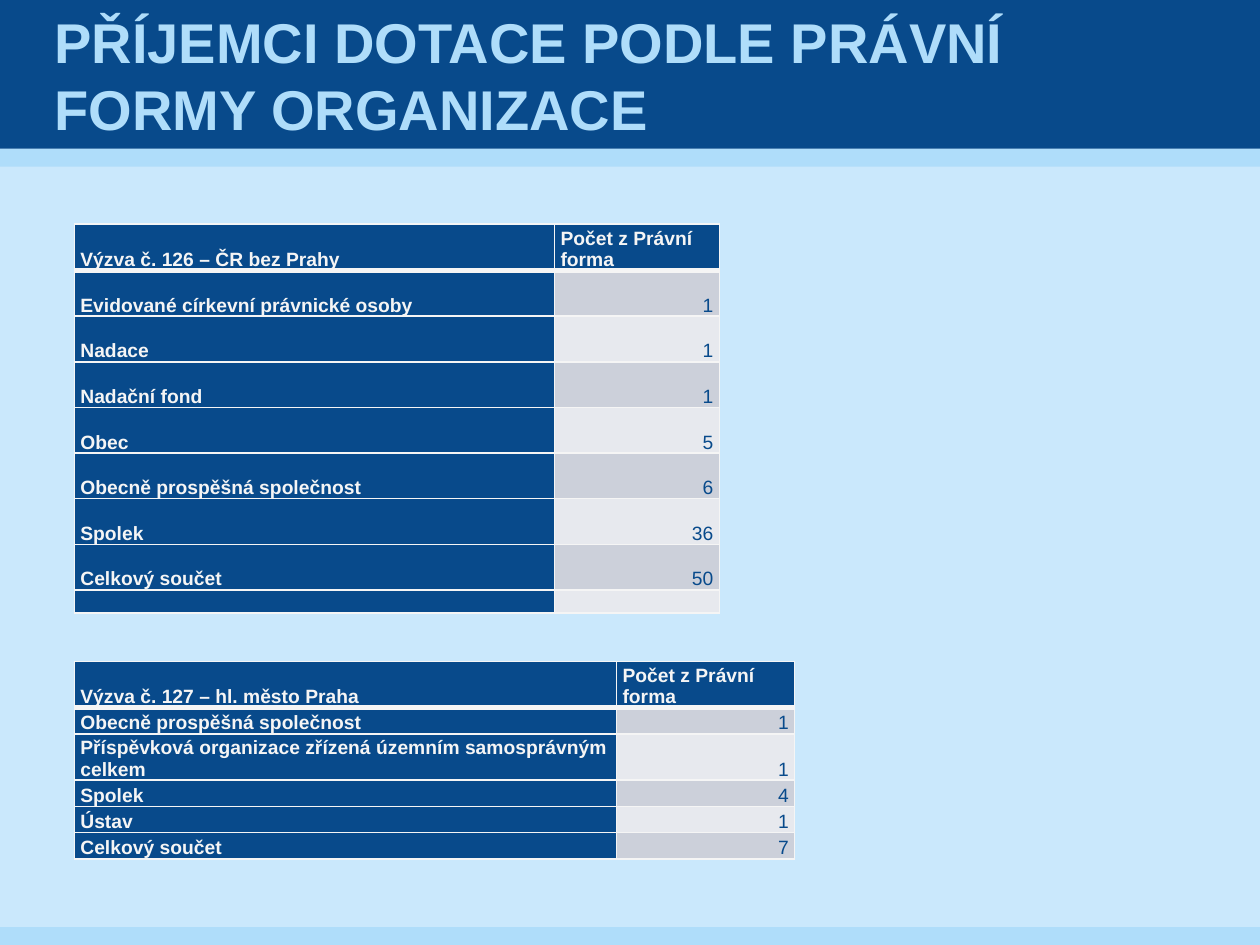
from dataclasses import dataclass

from lxml import etree
from pptx import Presentation
from pptx.dml.color import RGBColor
from pptx.enum.shapes import MSO_SHAPE
from pptx.enum.text import MSO_ANCHOR, PP_ALIGN
from pptx.oxml.ns import qn
from pptx.util import Cm, Pt

RECT = MSO_SHAPE.RECTANGLE
MIDDLE, BOTTOM = MSO_ANCHOR.MIDDLE, MSO_ANCHOR.BOTTOM
LEFT, RIGHT = PP_ALIGN.LEFT, PP_ALIGN.RIGHT
FONT = "Arial"
WIDTH, HEIGHT = 25.4, 19.05
HEAD, STRIPE = 3.0, 0.36
COLORS = {
    "page": "CAE8FC",
    "sky": "AFDDFA",
    "navy": "084A8B",
    "white": "F5F5F5",
    "dark": "CCD0DA",
    "light": "E7E9EE",
}


@dataclass
class Band:
    top: float
    height: float
    color: str


@dataclass
class Grid:
    top: float
    cols: list[float]
    heights: list[float]
    rows: list[tuple[str, str]]


BANDS = [
    Band(HEAD, STRIPE, "sky"),
    Band(0, HEAD, "navy"),
    Band(HEIGHT - STRIPE, STRIPE, "sky"),
]
COUNT = "Počet z Právní forma"
GRIDS = [
    Grid(4.52, [9.68, 3.32], [0.86] + [0.92] * 7 + [0.43], [
        ("Výzva č. 126 – ČR bez Prahy", COUNT),
        ("Evidované církevní právnické osoby", "1"),
        ("Nadace", "1"),
        ("Nadační fond", "1"),
        ("Obec", "5"),
        ("Obecně prospěšná společnost", "6"),
        ("Spolek", "36"),
        ("Celkový součet", "50"),
        ("", ""),
    ]),
    Grid(13.33, [10.93, 3.59], [0.86, 0.53, 0.86] + [0.53] * 3, [
        ("Výzva č. 127 – hl. město Praha", COUNT),
        ("Obecně prospěšná společnost", "1"),
        ("Příspěvková organizace zřízená územním samosprávným celkem", "1"),
        ("Spolek", "4"),
        ("Ústav", "1"),
        ("Celkový součet", "7"),
    ]),
]


def paint(fill, color: str) -> None:
    """Give a fill one solid colour."""
    fill.solid()
    fill.fore_color.rgb = RGBColor.from_string(COLORS[color])


def style(para, size: float, color: str, bold: bool) -> None:
    """Set the font of a paragraph."""
    font = para.font
    font.name, font.size, font.bold = FONT, Pt(size), bold
    font.color.rgb = RGBColor.from_string(COLORS[color])


def draw_band(slide, band: Band) -> None:
    """Draw a stripe across the whole slide."""
    shape = slide.shapes.add_shape(RECT, 0, Cm(band.top), Cm(WIDTH), Cm(band.height))
    shape.shadow.inherit = False
    paint(shape.fill, band.color)
    shape.line.fill.background()


def draw_title(slide, text: str) -> None:
    """Draw the heading on the top band."""
    frame = slide.shapes.add_textbox(Cm(1), 0, Cm(23.4), Cm(HEAD)).text_frame
    frame.word_wrap = True
    frame.vertical_anchor = MIDDLE
    frame.margin_left = frame.margin_right = Cm(0.1)
    frame.margin_top = frame.margin_bottom = 0
    frame.text = text
    style(frame.paragraphs[0], 32, "sky", True)


def add_edge(cell, side: str, width: float) -> None:
    """Add a border to one side of a cell."""
    props = cell._tc.get_or_add_tcPr()
    line = etree.SubElement(props, qn(f"a:ln{side}"), w=str(Pt(width)))
    fill = etree.SubElement(line, qn("a:solidFill"))
    etree.SubElement(fill, qn("a:srgbClr"), val=COLORS["white"])


def fill_cell(cell, text: str, row: int, col: int) -> None:
    """Write and format one cell by its place in the grid."""
    label = row == 0 or col == 0
    cell.text = text
    cell.vertical_anchor = BOTTOM
    cell.margin_left = cell.margin_right = Cm(0.12)
    cell.margin_top = cell.margin_bottom = 0
    para = cell.text_frame.paragraphs[0]
    para.alignment = LEFT if label else RIGHT
    style(para, 11, "white" if label else "navy", label)
    if not text:
        etree.SubElement(para._p, qn("a:endParaRPr"), sz="1100")
    for side in "LRTB":
        thick = (row, side) in {(0, "B"), (1, "T")}
        add_edge(cell, side, 3 if thick else 1)
    paint(cell.fill, "navy" if label else "dark" if row % 2 else "light")


def draw_grid(slide, grid: Grid) -> None:
    """Draw one table of counts."""
    table = slide.shapes.add_table(
        len(grid.rows), len(grid.cols), Cm(1.5), Cm(grid.top),
        Cm(sum(grid.cols)), Cm(sum(grid.heights)),
    ).table
    for column, width in zip(table.columns, grid.cols):
        column.width = Cm(width)
    for row, (height, texts) in enumerate(zip(grid.heights, grid.rows)):
        table.rows[row].height = Cm(height)
        for col, text in enumerate(texts):
            fill_cell(table.cell(row, col), text, row, col)


def main() -> None:
    """Build and save the slide."""
    deck = Presentation()
    deck.slide_width, deck.slide_height = Cm(WIDTH), Cm(HEIGHT)
    slide = deck.slides.add_slide(deck.slide_layouts[6])
    paint(slide.background.fill, "page")
    for band in BANDS:
        draw_band(slide, band)
    draw_title(slide, "PŘÍJEMCI DOTACE PODLE PRÁVNÍ FORMY ORGANIZACE")
    for grid in GRIDS:
        draw_grid(slide, grid)
    deck.save("out.pptx")


if __name__ == "__main__":
    main()
